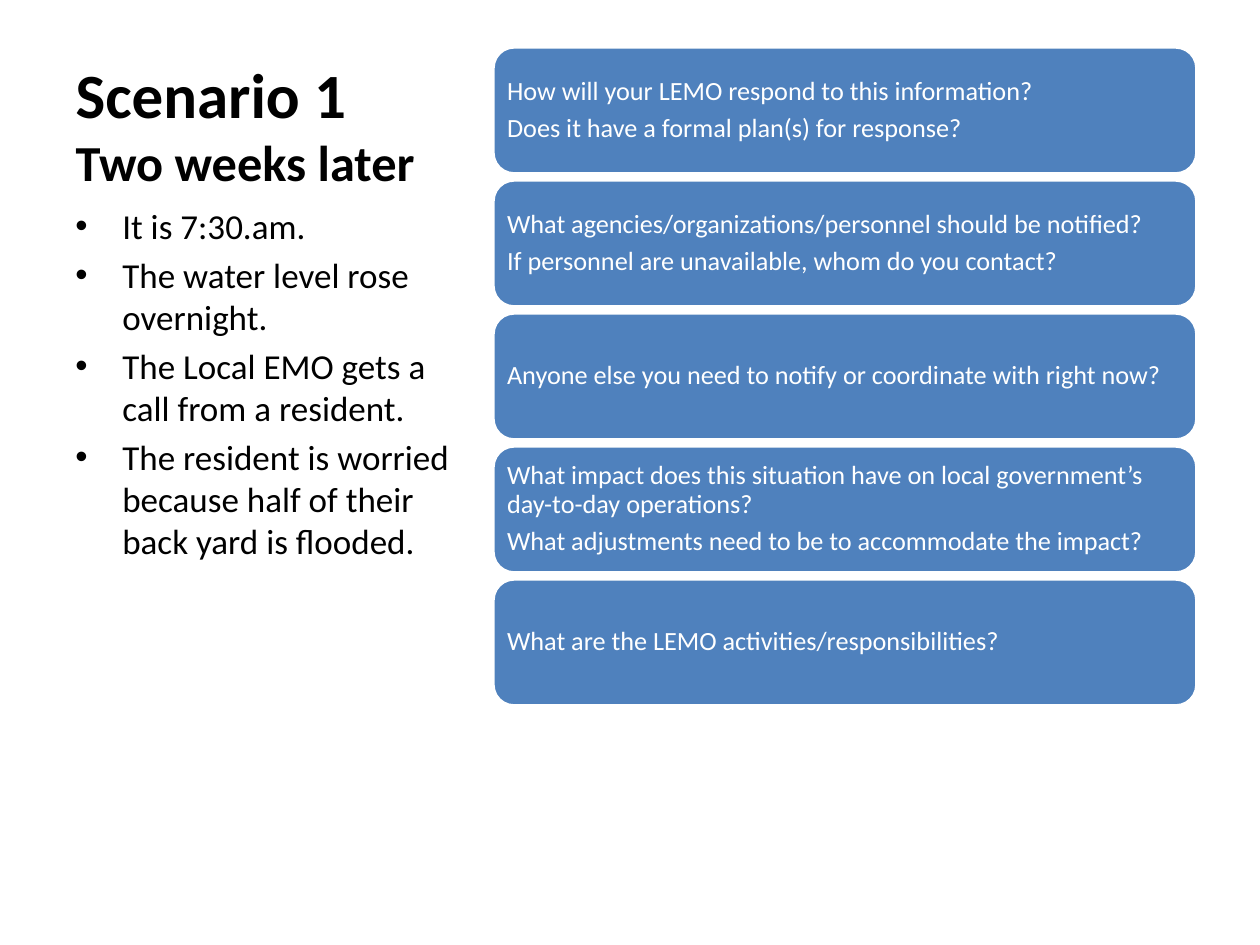
from lxml import etree
from pptx import Presentation
from pptx.dml.color import RGBColor
from pptx.enum.shapes import MSO_SHAPE
from pptx.enum.text import MSO_ANCHOR, MSO_AUTO_SIZE, PP_ALIGN
from pptx.oxml.ns import qn
from pptx.util import Emu, Pt

ROUNDED = MSO_SHAPE.ROUNDED_RECTANGLE
TOP, MIDDLE, BOTTOM = MSO_ANCHOR.TOP, MSO_ANCHOR.MIDDLE, MSO_ANCHOR.BOTTOM
NO_AUTOFIT = MSO_AUTO_SIZE.NONE
LEFT = PP_ALIGN.LEFT

BLACK = RGBColor(0x00, 0x00, 0x00)
WHITE = RGBColor(0xFF, 0xFF, 0xFF)
BLUE = RGBColor(0x4F, 0x81, 0xBD)

FONT = "Calibri"
PX_PER_INCH = 126
TITLE_ONLY = 5

HEADING = [("Scenario 1", 36), ("Two weeks later", 28.8)]
EVENTS = [
    "It is 7:30.am.",
    "The water level rose overnight.",
    "The Local EMO gets a call from a resident.",
    "The resident is worried because half of their back yard is flooded.",
]
QUESTIONS = [
    ["How will your LEMO respond to this information?",
     "Does it have a formal plan(s) for response?"],
    ["What agencies/organizations/personnel should be notified?",
     "If personnel are unavailable, whom do you contact?"],
    ["Anyone else you need to notify or coordinate with right now?"],
    ["What impact does this situation have on local government’s day-to-day operations?",
     "What adjustments need to be to accommodate the impact?"],
    ["What are the LEMO activities/responsibilities?"],
]


def px(length):
    return Emu(round(length * 914400 / PX_PER_INCH))


def set_format(target, values):
    for name, value in values.items():
        setattr(target, name, value)


def set_font(target, size, color, bold=False):
    set_format(target.font, {"name": FONT, "size": Pt(size), "bold": bold})
    target.font.color.rgb = color


def set_frame(frame, anchor, side=None):
    set_format(frame, {"word_wrap": True, "auto_size": NO_AUTOFIT, "vertical_anchor": anchor})
    if side is not None:
        sides = ("margin_left", "margin_top", "margin_right", "margin_bottom")
        set_format(frame, dict.fromkeys(sides, px(side)))


def add_bullet(para, indent):
    properties = para._p.get_or_add_pPr()
    properties.set("marL", str(px(indent)))
    properties.set("indent", str(-px(indent)))
    etree.SubElement(properties, qn("a:buFont")).set("typeface", "Arial")
    etree.SubElement(properties, qn("a:buChar")).set("char", "•")


def fill_title(title, left, top, width, height):
    set_format(title, {"left": px(left), "top": px(top),
                       "width": px(width), "height": px(height)})
    set_frame(title.text_frame, BOTTOM)
    para = title.text_frame.paragraphs[0]
    para.alignment = LEFT
    for index, (text, size) in enumerate(HEADING):
        if index:
            para.add_line_break()
        span = para.add_run()
        span.text = text
        set_font(span, size, BLACK, bold=True)


def add_events(page, left, top, width, height):
    box = page.shapes.add_textbox(px(left), px(top), px(width), px(height))
    set_frame(box.text_frame, TOP)
    box.text_frame.text = "\n".join(EVENTS)
    for index, para in enumerate(box.text_frame.paragraphs):
        add_bullet(para, 47)
        para.space_before = Pt(4 if index else 0)
        set_font(para, 20, BLACK)


def add_question_cards(page, left, top, width, height, gap):
    """Stack one card per question group; height is that of a single card."""
    for index, lines in enumerate(QUESTIONS):
        card_top = top + index * (height + gap)
        card = page.shapes.add_shape(ROUNDED, px(left), px(card_top), px(width), px(height))
        card.shadow.inherit = False
        card.fill.solid()
        card.fill.fore_color.rgb = BLUE
        card.line.color.rgb = WHITE
        card.line.width = Pt(2)
        set_frame(card.text_frame, MIDDLE, side=8)
        card.text_frame.text = "\n".join(lines)
        for para in card.text_frame.paragraphs:
            set_format(para, {"alignment": LEFT, "line_spacing": 0.9, "space_after": Pt(5.25)})
            set_font(para, 15, WHITE)


def main():
    deck = Presentation()
    set_format(deck, {"slide_width": px(1260), "slide_height": px(945)})
    page = deck.slides.add_slide(deck.slide_layouts[TITLE_ONLY])
    fill_title(page.shapes.title, 63, 38, 415, 160)
    add_events(page, 63, 198, 415, 517)
    add_question_cards(page, 493, 47, 704, 127, gap=6)
    deck.save("out.pptx")


if __name__ == "__main__":
    main()
